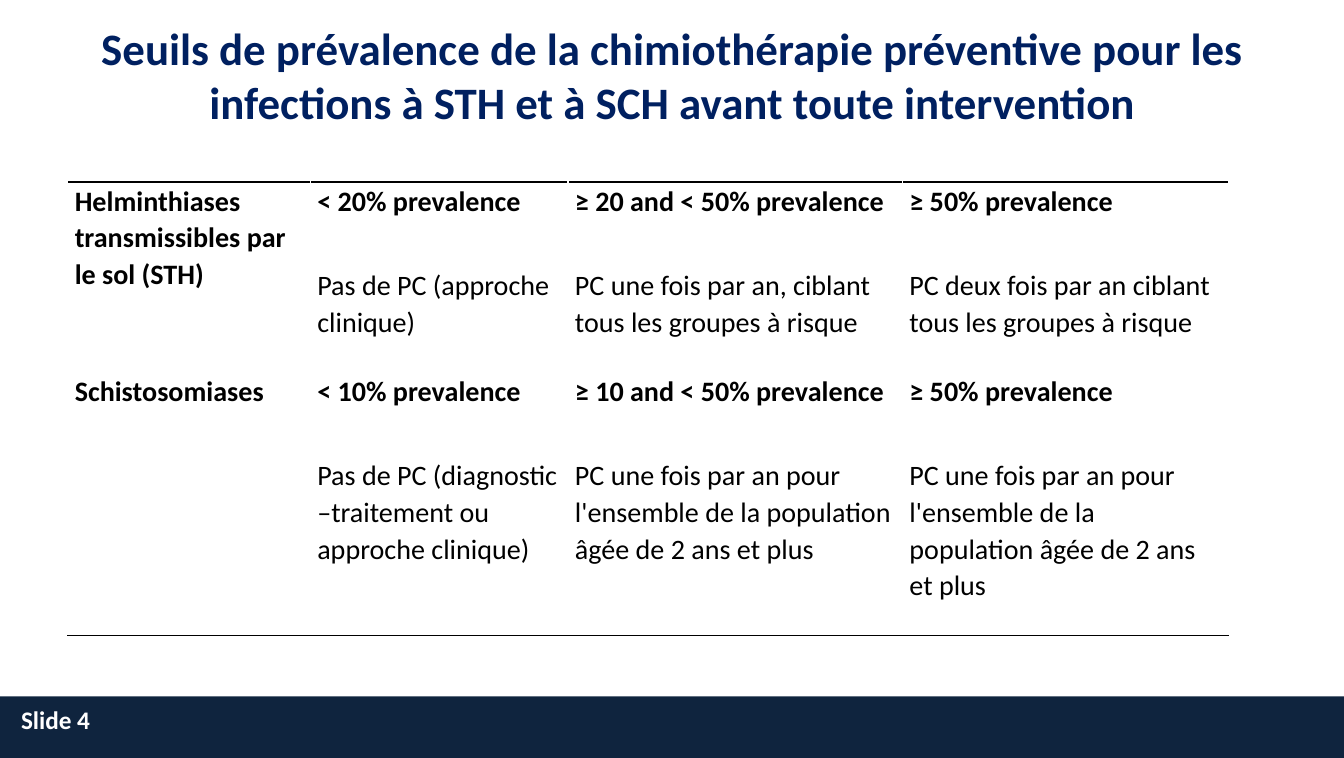
from dataclasses import dataclass

from lxml.etree import SubElement
from pptx import Presentation
from pptx.dml.color import RGBColor
from pptx.enum.shapes import MSO_SHAPE as Shape
from pptx.enum.text import MSO_ANCHOR as Anchor, PP_ALIGN as Align
from pptx.oxml import parse_xml
from pptx.oxml.ns import nsdecls, qn
from pptx.util import Emu, Pt

FONT = "Calibri"
BLACK, WHITE, TITLE_BLUE, BAND_NAVY = "000000", "FFFFFF", "002060", "0F243E"
EMU_PER_PX = 9144  # 100 px to the inch
SLIDE_WIDTH, SLIDE_HEIGHT = 1330, 750
BAND_TOP = 689
COLUMN_WIDTHS = (240, 255, 331, 323)
HEADING_GAP = 34  # points between a threshold and its treatment


@dataclass(frozen=True)
class Threshold:
    prevalence: str
    treatment: str


@dataclass(frozen=True)
class Disease:
    name: str
    row_height: int
    border_tag: str
    thresholds: tuple[Threshold, ...]


YEARLY_PC = "PC une fois par an pour l'ensemble de la population âgée de 2 ans et plus"
DISEASES = (
    Disease("Helminthiases transmissibles par le sol (STH)", 188, "a:lnT", (
        Threshold("< 20% prevalence", "Pas de PC (approche clinique)"),
        Threshold("≥ 20 and < 50% prevalence",
                  "PC une fois par an, ciblant tous les groupes à risque"),
        Threshold("≥ 50% prevalence",
                  "PC deux fois par an ciblant tous les groupes à risque"),
    )),
    Disease("Schistosomiases", 261, "a:lnB", (
        Threshold("< 10% prevalence",
                  "Pas de PC (diagnostic –traitement ou approche clinique)"),
        Threshold("≥ 10 and < 50% prevalence", YEARLY_PC),
        Threshold("≥ 50% prevalence", YEARLY_PC),
    )),
)


def px(length: int) -> Emu:
    return Emu(length * EMU_PER_PX)


def color(value: str) -> RGBColor:
    return RGBColor.from_string(value)


def write(paragraph, text: str, *, size: int = 20, bold: bool = False,
          fill: str = BLACK, align=Align.LEFT, spacing: float = 1.0,
          after: int = 0) -> None:
    paragraph.alignment = align
    paragraph.line_spacing = spacing
    paragraph.space_after = Pt(after)
    run = paragraph.add_run()
    run.text = text
    run.font.name = FONT
    run.font.size = Pt(size)
    run.font.bold = bold
    run.font.color.rgb = color(fill)


def add_text(slide, left: int, top: int, width: int, height: int, text: str,
             *, anchor=Anchor.TOP, **text_format) -> None:
    box = slide.shapes.add_textbox(px(left), px(top), px(width), px(height))
    box.text_frame.word_wrap = True
    box.text_frame.vertical_anchor = anchor
    write(box.text_frame.paragraphs[0], text, **text_format)


def set_border(cell, tag: str) -> None:
    line = parse_xml(f'<{tag} {nsdecls("a")} w="{Pt(1)}"/>')
    fill = SubElement(line, qn("a:solidFill"))
    SubElement(fill, qn("a:srgbClr"), val=BLACK)
    cell._tc.get_or_add_tcPr().insert(0, line)


def prepare_cell(cell, border_tag: str):
    cell.margin_left = cell.margin_right = px(7)
    cell.margin_top = cell.margin_bottom = 0
    cell.fill.background()
    set_border(cell, border_tag)
    return cell.text_frame


def add_threshold_table(slide, left: int, top: int) -> None:
    height = sum(disease.row_height for disease in DISEASES)
    table = slide.shapes.add_table(
        len(DISEASES), len(COLUMN_WIDTHS), px(left), px(top),
        px(sum(COLUMN_WIDTHS)), px(height)).table
    table.first_row = table.horz_banding = False
    for column, width in zip(table.columns, COLUMN_WIDTHS):
        column.width = px(width)
    for row, disease in zip(table.rows, DISEASES):
        row.height = px(disease.row_height)
        name_cell, *threshold_cells = row.cells
        frame = prepare_cell(name_cell, disease.border_tag)
        write(frame.paragraphs[0], disease.name, bold=True, spacing=1.07, after=8)
        for cell, threshold in zip(threshold_cells, disease.thresholds):
            frame = prepare_cell(cell, disease.border_tag)
            write(frame.paragraphs[0], threshold.prevalence, bold=True,
                  spacing=1.07, after=HEADING_GAP)
            write(frame.add_paragraph(), threshold.treatment, spacing=1.07, after=8)


def add_footer(slide) -> None:
    band = slide.shapes.add_shape(
        Shape.RECTANGLE, 0, px(BAND_TOP), px(SLIDE_WIDTH), px(SLIDE_HEIGHT - BAND_TOP))
    band.shadow.inherit = False
    band.fill.solid()
    band.fill.fore_color.rgb = color(BAND_NAVY)
    band.line.fill.background()
    add_text(slide, 11, 692, 310, 40, "Slide 4", size=18, bold=True, fill=WHITE)


def main() -> None:
    presentation = Presentation()
    presentation.slide_width = px(SLIDE_WIDTH)
    presentation.slide_height = px(SLIDE_HEIGHT)
    slide = presentation.slides.add_slide(presentation.slide_layouts[6])

    # Title
    add_text(slide, 67, 19, 1197, 110,
             "Seuils de prévalence de la chimiothérapie préventive pour les "
             "infections à STH et à SCH avant toute intervention",
             anchor=Anchor.MIDDLE, size=32, bold=True, fill=TITLE_BLUE,
             align=Align.CENTER)
    # Footer band and slide number
    add_footer(slide)
    # Prevalence thresholds by disease
    add_threshold_table(slide, 67, 180)

    presentation.save("out.pptx")


if __name__ == "__main__":
    main()
